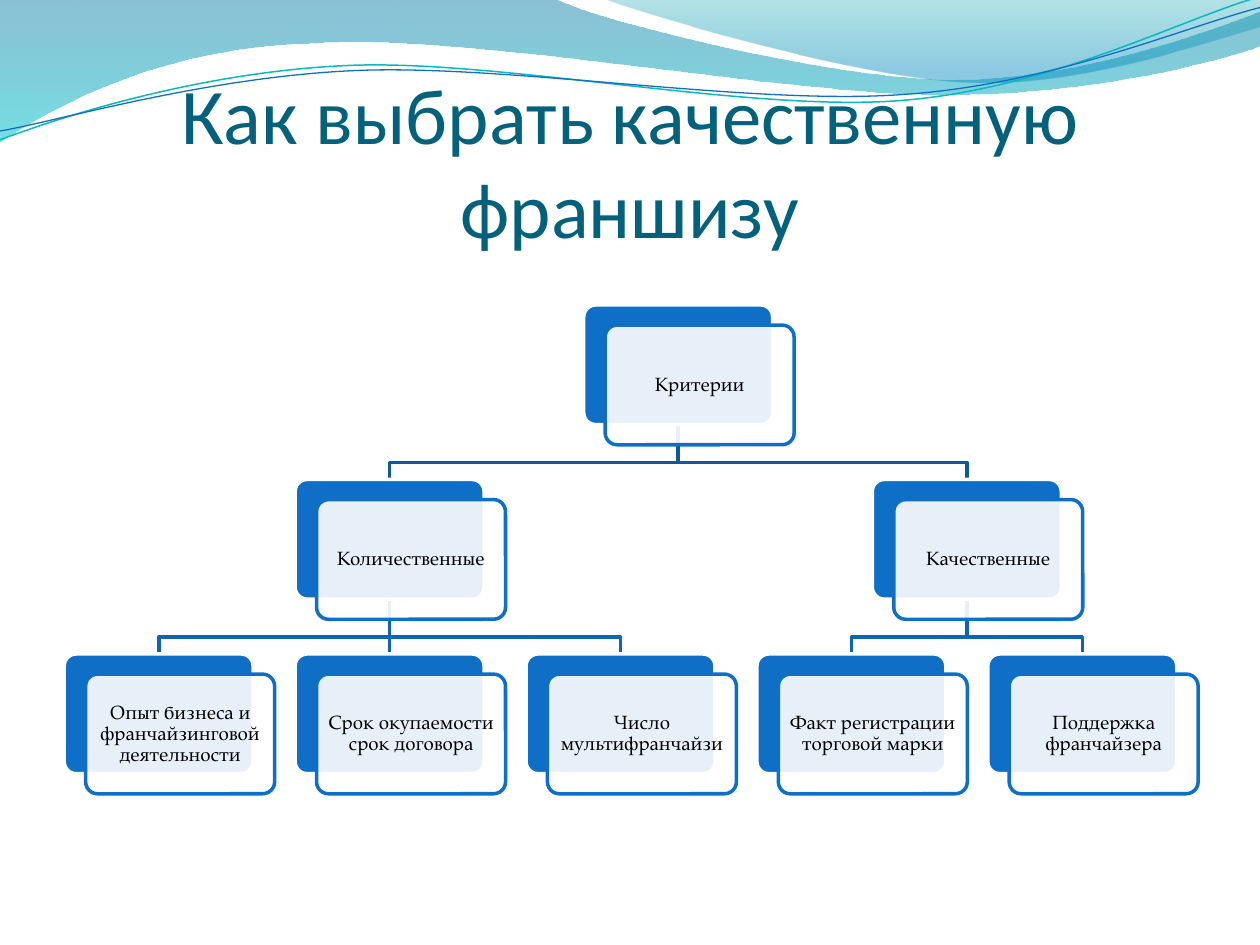
from lxml.etree import SubElement
from pptx import Presentation
from pptx.dml.color import RGBColor
from pptx.enum.shapes import MSO_SHAPE as Shape
from pptx.enum.text import MSO_ANCHOR as Anchor, PP_ALIGN as Align
from pptx.oxml.ns import qn
from pptx.util import Inches, Pt

BLUE = RGBColor(0x0F, 0x6F, 0xC6)
AQUA = RGBColor(0x0A, 0xB8, 0xBF)
NAVY = RGBColor(0x0C, 0x59, 0x9F)
ROYAL = RGBColor(0x0E, 0x65, 0xB4)
TEAL = RGBColor(0x04, 0x61, 0x7B)
DEEP = RGBColor(0x00, 0x74, 0xA1)
CYAN = RGBColor(0x00, 0xC6, 0xCF)
MINT = RGBColor(0x00, 0xA1, 0xA9)
SKY = RGBColor(0x00, 0x8B, 0xBF)
WHITE = RGBColor(0xFF, 0xFF, 0xFF)
BLACK = RGBColor(0, 0, 0)

CARD_W, CARD_H = 1.5, 0.95
SHIFT_X, SHIFT_Y, INSET = 0.17, 0.16, 0.03

TREE = ("Критерии", [
    ("Количественные", [
        ("Опыт бизнеса и франчайзинговой деятельности", []),
        ("Срок окупаемости срок договора", []),
        ("Число мультифранчайзи", []),
    ]),
    ("Качественные", [
        ("Факт регистрации торговой марки", []),
        ("Поддержка франчайзера", []),
    ]),
])

BANDS = [
    ([(0, 0), (4.4, -0.01),
      (4.76, 0.17, 6.64, 0.63, 7.58, 0.63), (8.53, 0.63, 9.58, 0.26, 10, 0.09),
      (10.01, 0.36),
      (9.83, 0.44, 8.7, 0.76, 7.46, 0.75), (6.22, 0.75, 3.82, 0.28, 2.57, 0.34),
      (1.29, 0.36, 0.46, 0.83, -0.01, 1.13)],
     [(0, DEEP, 45), (1, CYAN, 55)]),
    ([(4.79, -0.01),
      (5.09, 0.11, 6.82, 0.62, 7.69, 0.65), (8.56, 0.69, 9.61, 0.32, 10, 0.21),
      (10, 0)],
     [(0, MINT, 30), (0.8, SKY, 45)]),
]

WAVES = [
    ([(0, 1.11),
      (0.48, 0.93, 1.58, 0.57, 2.77, 0.52), (3.95, 0.47, 5.93, 0.89, 7.13, 0.8),
      (8.33, 0.71, 9.38, 0.15, 9.98, -0.02)], AQUA, 0.85),
    ([(0, 1.04),
      (0.47, 0.96, 1.64, 0.61, 2.83, 0.56), (4.03, 0.51, 5.97, 0.84, 7.17, 0.75),
      (8.36, 0.67, 9.41, 0.21, 10, 0.06)], BLUE, 0.75),
]


def outline(slide, steps, left=0, top=0, close=False):
    """Draw a freeform of lines (two numbers) and cubic curves (six)."""
    spots = [(Inches(left + x), Inches(top + y))
             for step in steps for x, y in zip(step[::2], step[1::2])]
    pen = slide.shapes.build_freeform(*spots[0])
    pen.add_line_segments(spots[1:], close=close)
    shape = pen.convert_to_shape()
    shape.shadow.inherit = False
    lines = iter(list(shape.element.iter(qn("a:lnTo"))))
    for step in steps[1:]:
        first = next(lines)
        if len(step) == 6:
            first.tag = qn("a:cubicBezTo")
            for line in (next(lines), next(lines)):
                first.append(line[0])
                line.getparent().remove(line)
    return shape


def stroke(shape, color, width):
    """Give a shape a solid line."""
    shape.line.color.rgb = color
    shape.line.width = Pt(width)


def fade(shape, *alphas):
    """Set the opacity in percent of each fill colour in turn."""
    for tag, alpha in zip(shape.element.spPr.iter(qn("a:srgbClr")), alphas):
        SubElement(tag, qn("a:alpha")).set("val", str(alpha * 1000))


def add_header(slide, left, top):
    """Draw the tinted bands and thin waves from the given corner."""
    for steps, stops in BANDS:
        band = outline(slide, steps, left, top, close=True)
        band.fill.gradient()
        band.fill.gradient_angle = 270
        for mark, (place, color, _) in zip(band.fill.gradient_stops, stops):
            mark.position = place
            mark.color.rgb = color
        fade(band, *(alpha for _, _, alpha in stops))
        band.line.fill.background()
    for steps, color, width in WAVES:
        wave = outline(slide, steps, left, top)
        wave.fill.background()
        stroke(wave, color, width)


def add_text(slide, box, text, font, size, color, anchor, margins):
    """Add a centred wrapping text box and return its paragraph."""
    frame = slide.shapes.add_textbox(*map(Inches, box)).text_frame
    frame.word_wrap = True
    frame.vertical_anchor = anchor
    (frame.margin_left, frame.margin_top,
     frame.margin_right, frame.margin_bottom) = map(Inches, margins)
    frame.text = text
    line = frame.paragraphs[0]
    line.alignment = Align.CENTER
    line.font.name, line.font.size = font, Pt(size)
    line.font.color.rgb = color
    return line


def add_title(slide, *box):
    """Place the centred title at the foot of its box."""
    add_text(slide, box, "Как выбрать качественную франшизу", "Calibri", 45,
             TEAL, Anchor.BOTTOM, (0, 0.05, 0, 0))


def add_plate(slide, left, top, fill, edge):
    """Add one rounded plate of a card."""
    plate = slide.shapes.add_shape(
        Shape.ROUNDED_RECTANGLE, *map(Inches, (left, top, CARD_W, CARD_H)))
    plate.adjustments[0] = 0.1
    plate.shadow.inherit = False
    plate.fill.solid()
    plate.fill.fore_color.rgb = fill
    stroke(plate, edge, 2)
    return plate


def add_card(slide, left, top, text):
    """Add a blue plate, a shifted white plate and the text on it."""
    add_plate(slide, left, top, BLUE, WHITE)
    x, y = left + SHIFT_X, top + SHIFT_Y
    fade(add_plate(slide, x, y, WHITE, BLUE), 90)
    box = (x + INSET, y + INSET, CARD_W - 2 * INSET, CARD_H - 2 * INSET)
    line = add_text(slide, box, text, "TeX Gyre Pagella", 11, BLACK,
                    Anchor.MIDDLE, [0.05] * 4)
    line.line_spacing = 0.9


def add_link(slide, start, end, color):
    """Join a parent's foot to a child's head with a stepped line."""
    (x, y), (to_x, to_y) = start, end
    bend = y + 0.3
    points = [start, end] if x == to_x else [start, (x, bend), (to_x, bend), end]
    link = outline(slide, points)
    link.fill.background()
    stroke(link, color, 2)


def add_tree(slide, left, top, width, height):
    """Lay out the tree in its box, each parent centred over its children."""
    col = (width - CARD_W - SHIFT_X) / 4
    row = (height - CARD_H - SHIFT_Y) / 2
    cards, links, leaves = [], [], []

    def place(node, level):
        text, kids = node
        y = top + level * row
        rank = len(cards)
        spots = [place(kid, level + 1) for kid in kids]
        if kids:
            x = (spots[0] + spots[-1]) / 2
        else:
            x = left + len(leaves) * col
            leaves.append(text)
        cards.insert(rank, (x, y, text))
        mid = CARD_W / 2
        for spot in spots:
            links.append(((x + mid, y + CARD_H), (spot + mid, y + row),
                          ROYAL if level else NAVY))
        return x

    place(TREE, 0)
    for link in reversed(links):
        add_link(slide, *link)
    for card in cards:
        add_card(slide, *card)


def main():
    """Build the slide and save it."""
    deck = Presentation()
    deck.slide_width, deck.slide_height = Inches(10), Inches(7.5)
    slide = deck.slides.add_slide(deck.slide_layouts[6])
    add_header(slide, 0, 0)
    add_title(slide, 0.5, 0.77, 9, 1.25)
    add_tree(slide, 0.51, 2.42, 9, 3.88)
    deck.save("out.pptx")


if __name__ == "__main__":
    main()
